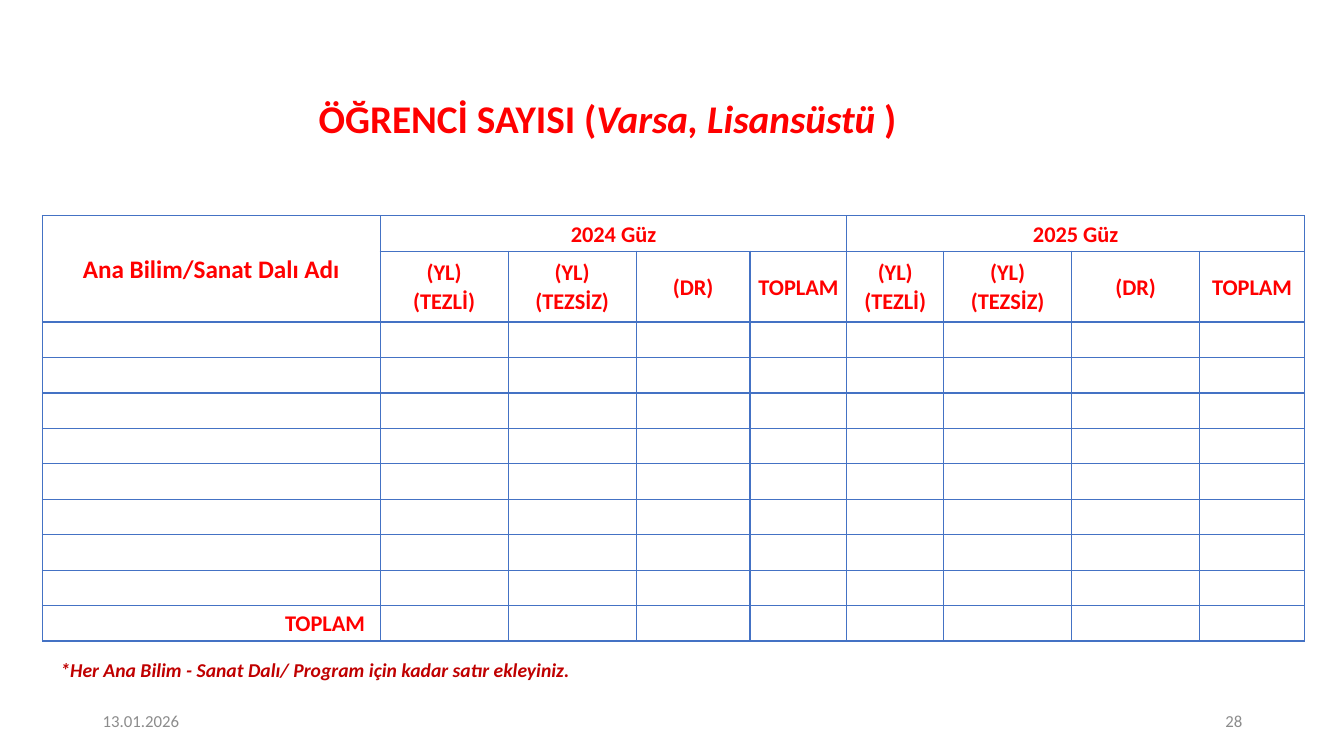
"""Build the graduate student count slide with its empty entry table."""
from lxml import etree
from pptx import Presentation
from pptx.dml.color import RGBColor
from pptx.enum.text import MSO_ANCHOR, PP_ALIGN
from pptx.oxml.ns import qn
from pptx.util import Inches, Pt

LEFT, MID, RIGHT = PP_ALIGN.LEFT, PP_ALIGN.CENTER, PP_ALIGN.RIGHT
TOP, CORE = MSO_ANCHOR.TOP, MSO_ANCHOR.MIDDLE

THEME = {
    "font": "Calibri",
    "red": "FF0000", "dark": "C00000", "grey": "8C8C8C", "line": "4472C4",
    "title": 28, "name": 18, "head": 16, "note": 14, "foot": 12,
}

TITLE = [("ÖĞRENCİ SAYISI (", False), ("Varsa, Lisansüstü ", True), (")", False)]
NOTE = [("*Her Ana Bilim - Sanat Dalı/ Program için kadar satır ekleyiniz.", True)]
DATE = [("13.01.2026", False)]
PAGE = [("28", False)]
NAME = "Ana Bilim/Sanat Dalı Adı"
TERMS = ["2024 Güz", "2025 Güz"]
KINDS = ["(YL)\n(TEZLİ)", "(YL)\n(TEZSİZ)", "(DR)", "TOPLAM"]
TOTAL = "TOPLAM"

COLS = [3.35, 1.27, 1.27, 1.13, 0.96, 0.96, 1.27, 1.27, 1.04]
UNITS = [1, 2] + [1] * 9
AREA = (0.42, 2.14, sum(COLS), 4.22)
BOXES = [
    ((0.28, 0.86, 11.49, 0.68), TITLE, "title", "red", True, MID, CORE, 0.9),
    ((0.92, 6.95, 3, 0.4), DATE, "foot", "grey", False, LEFT, CORE, 1),
    ((9.42, 6.95, 3, 0.4), PAGE, "foot", "grey", False, RIGHT, CORE, 1),
    ((0.5, 6.48, 8.48, 0.34), NOTE, "note", "dark", True, LEFT, TOP, 1),
]


def style(font, size, color, bold, slant=False):
    font.name = THEME["font"]
    font.size = Pt(THEME[size])
    font.color.rgb = RGBColor.from_string(THEME[color])
    font.bold, font.italic = bold, slant


def add_box(slide, area, runs, size, color, bold, align, anchor, space):
    frame = slide.shapes.add_textbox(*map(Inches, area)).text_frame
    frame.word_wrap = True
    frame.vertical_anchor = anchor
    para = frame.paragraphs[0]
    para.alignment, para.line_spacing = align, space
    for text, slant in runs:
        run = para.add_run()
        run.text = text
        style(run.font, size, color, bold, slant)


def add_edges(cell):
    props = cell._tc.get_or_add_tcPr()
    for i, side in enumerate(("lnL", "lnR", "lnT", "lnB")):
        line = etree.Element(qn("a:" + side), w=str(Pt(1)))
        fill = etree.SubElement(line, qn("a:solidFill"))
        etree.SubElement(fill, qn("a:srgbClr"), val=THEME["line"])
        props.insert(i, line)


def put(cell, text, size="head", align=MID):
    cell.text = text
    for para in cell.text_frame.paragraphs:
        para.alignment, para.line_spacing = align, 1.07
        for run in para.runs:
            style(run.font, size, "red", True)


def add_grid(slide):
    shape = slide.shapes.add_table(len(UNITS), len(COLS), *map(Inches, AREA))
    table = shape.table
    table.first_row = table.horz_banding = False
    for col, width in zip(table.columns, COLS):
        col.width = Inches(width)
    for row, unit in zip(table.rows, UNITS):
        row.height = Inches(AREA[3] * unit / sum(UNITS))
    for cell in table.iter_cells():
        cell.margin_left = cell.margin_right = 0
        cell.margin_top = cell.margin_bottom = 0
        cell.vertical_anchor = CORE
        cell.fill.background()
        add_edges(cell)

    table.cell(0, 0).merge(table.cell(1, 0))
    put(table.cell(0, 0), NAME, "name")
    for i, term in enumerate(TERMS):
        start = 1 + i * len(KINDS)
        table.cell(0, start).merge(table.cell(0, start + len(KINDS) - 1))
        put(table.cell(0, start), term)
        for j, kind in enumerate(KINDS):
            put(table.cell(1, start + j), kind)
    last = table.cell(len(UNITS) - 1, 0)
    last.margin_right = Inches(0.15)
    put(last, TOTAL, align=RIGHT)


def main():
    deck = Presentation()
    deck.slide_width, deck.slide_height = Inches(13.33), Inches(7.5)
    slide = deck.slides.add_slide(deck.slide_layouts[6])
    for box in BOXES:
        add_box(slide, *box)
    add_grid(slide)
    deck.save("out.pptx")


if __name__ == "__main__":
    main()
